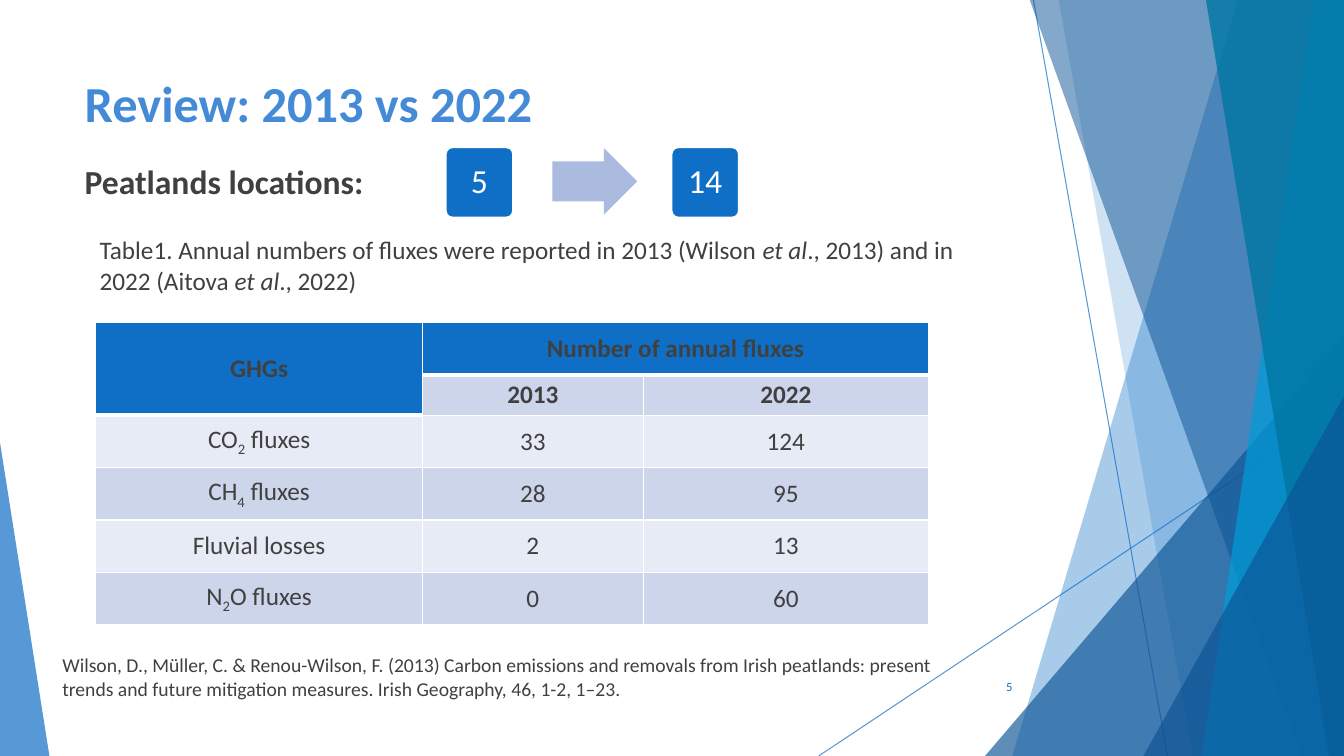
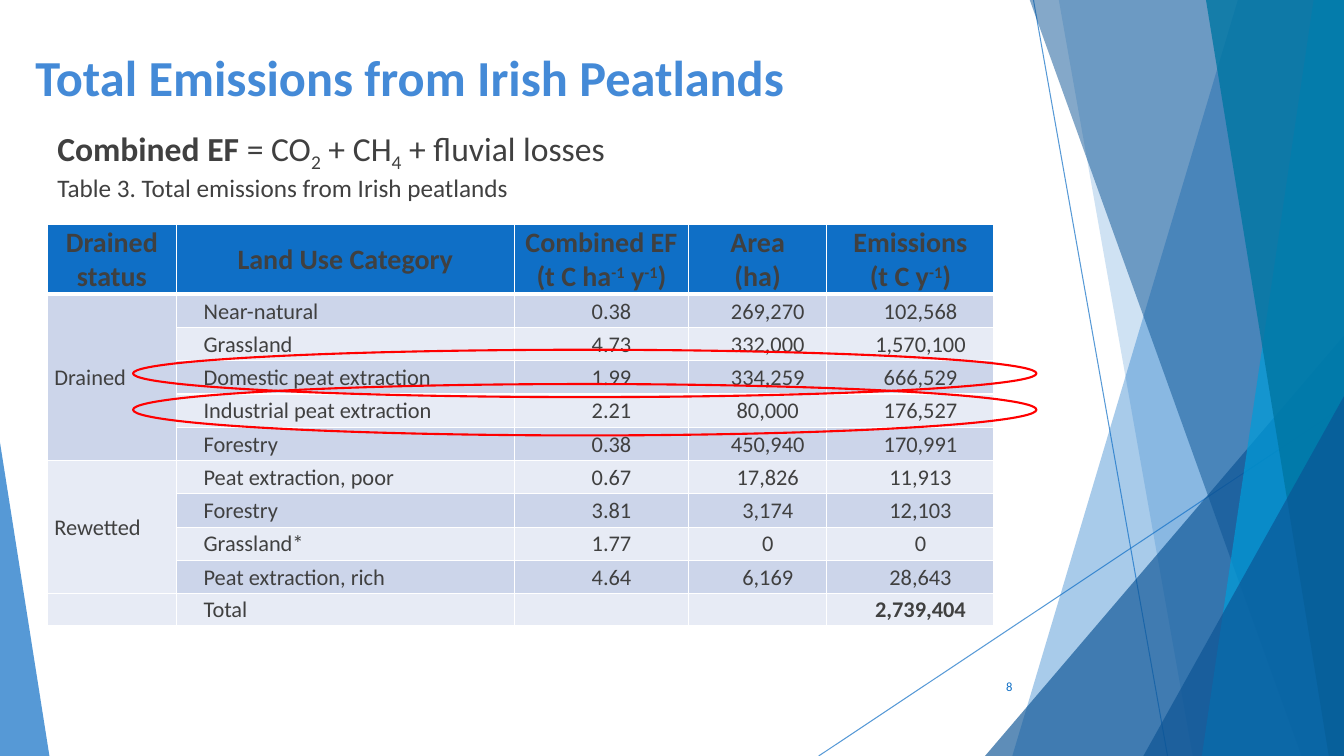
from dataclasses import dataclass

from lxml.etree import SubElement
from pptx import Presentation
from pptx.dml.color import RGBColor
from pptx.dml.fill import FillFormat
from pptx.enum.shapes import MSO_CONNECTOR, MSO_SHAPE
from pptx.enum.text import MSO_ANCHOR, PP_ALIGN
from pptx.oxml.ns import qn
from pptx.util import Inches, Pt

FONT = "Calibri"
BLUE, NAVY, CYAN, TEAL = "0F6FC6", "0B5394", "009DD9", "0076A3"
SKY, ARROW, RED, INK, WHITE = "448AD7", "ABBBDF", "FF0000", "404040", "FFFFFF"
TINTS = ("E7EBF5", "CCD5EA")
WIDE, HIGH = 13.33, 7.5
LEFT, MID, RIGHT = PP_ALIGN.LEFT, PP_ALIGN.CENTER, PP_ALIGN.RIGHT


@dataclass(frozen=True)
class Box:
    left: float
    top: float
    wide: float
    high: float

    def emu(self) -> tuple[int, ...]:
        return tuple(Inches(v) for v in (self.left, self.top, self.wide, self.high))


@dataclass(frozen=True)
class Ray:
    start: tuple[float, float]
    end: tuple[float, float]


@dataclass(frozen=True)
class Band:
    top: float
    foot: float
    color: str
    alpha: int


@dataclass(frozen=True)
class Peak:
    box: Box
    tip: float
    color: str
    alpha: int


@dataclass(frozen=True)
class Grid:
    box: Box
    cols: tuple[float, ...]
    rows: tuple[float, ...]
    pads: tuple[float, float, float, float]
    cells: tuple[tuple[str, ...], ...]
    spans: tuple[tuple[int, int, int, int], ...]


DECOR = (
    Ray((10.25, 0), (11.58, HIGH)),
    Ray((WIDE, 4.03), (8.12, HIGH)),
    Band(12.28, 10.04, BLUE, 36),
    Band(10.5, 11.83, BLUE, 20),
    Peak(Box(9.77, 3.33, 3.56, 4.17), 1, NAVY, 66),
    Band(10.21, 12.91, NAVY, 50),
    Band(13.03, 11.92, CYAN, 70),
    Band(11.96, 13.18, TEAL, 80),
    Peak(Box(11.34, 3.93, 1.99, 3.57), 1, NAVY, 66),
    Peak(Box(0, 4.39, 0.49, 3.11), 0, BLUE, 70),
)

FLUXES = Grid(
    Box(0.95, 3.2, 8.27, 3),
    (3.24, 2.19, 2.83),
    (0.52, 0.4) + (0.52,) * 4,
    (0.05,) * 4,
    (
        ("GHGs", "Number of annual fluxes", ""),
        ("", "2013", "2022"),
        ("CO|_2| fluxes", "33", "124"),
        ("CH|_4| fluxes", "28", "95"),
        ("Fluvial losses", "2", "13"),
        ("N|_2|O fluxes", "0", "60"),
    ),
    ((0, 0, 1, 0), (0, 1, 0, 2)),
)

TOTALS = Grid(
    Box(0.47, 2.23, 9.4, 3.98),
    (1.28, 3.35, 1.73, 1.37, 1.66),
    (0.69,) + (0.33,) * 9 + (0.32,),
    (0.07, 0.01, 0.07, 0),
    (
        ("Drained status", "Land Use Category", "Combined EF\n(t C ha|^-1| y|^-1|)",
         "Area\n(ha)", "Emissions\n(t C y|^-1|)"),
        ("Drained", "Near-natural", "0.38", "269,270", "102,568"),
        ("", "Grassland", "4.73", "332,000", "1,570,100"),
        ("", "Domestic peat extraction", "1.99", "334,259", "666,529"),
        ("", "Industrial peat extraction", "2.21", "80,000", "176,527"),
        ("", "Forestry", "0.38", "450,940", "170,991"),
        ("Rewetted", "Peat extraction, poor", "0.67", "17,826", "11,913"),
        ("", "Forestry", "3.81", "3,174", "12,103"),
        ("", "Grassland*", "1.77", "0", "0"),
        ("", "Peat extraction, rich", "4.64", "6,169", "28,643"),
        ("", "Total", "", "", "|*2,739,404"),
    ),
    ((1, 0, 5, 0), (6, 0, 9, 0)),
)


def paint(fill: FillFormat, color: str) -> None:
    fill.solid()
    fill.fore_color.rgb = RGBColor.from_string(color)


def fade(shape, alpha: int) -> None:
    for node in shape.element.iter(qn("a:srgbClr")):
        SubElement(node, qn("a:alpha")).set("val", str(alpha * 1000))


def write(frame, text: str, *, size: float, color: str = INK, bold: bool = False,
          align: PP_ALIGN = LEFT, after: float | None = None,
          line: float | None = None, indent: float = 0) -> None:
    frame.word_wrap = True
    for row, part in enumerate(text.split("\n")):
        para = frame.add_paragraph() if row else frame.paragraphs[0]
        para.alignment = align
        if after is not None:
            para.space_after = Pt(after)
        if line is not None:
            para.line_spacing = line
        if indent:
            para._p.get_or_add_pPr().set("marL", str(Inches(indent)))
        for bit in filter(None, part.split("|")):
            mark = bit[0] if bit[0] in "_^/*" else ""
            run = para.add_run()
            run.text = bit[len(mark):]
            font = run.font
            font.name, font.size = FONT, Pt(size)
            font.bold = bold or mark == "*"
            font.italic = mark == "/"
            paint(font.fill, color)
            if mark in ("_", "^"):
                base = "-25000" if mark == "_" else "30000"
                run._r.get_or_add_rPr().set("baseline", base)


def label(slide, box: Box, text: str, **form):
    frame = slide.shapes.add_textbox(*box.emu()).text_frame
    write(frame, text, **form)
    return frame


def shape(slide, kind: MSO_SHAPE, box: Box, color: str = "",
          edge: str = "", tips: tuple[float, ...] = ()):
    item = slide.shapes.add_shape(kind, *box.emu())
    for spot, value in enumerate(tips):
        item.adjustments[spot] = value
    return style(item, color, edge)


def style(item, color: str = "", edge: str = ""):
    item.shadow.inherit = False
    if color:
        paint(item.fill, color)
    else:
        item.fill.background()
    if edge:
        paint(item.line.fill, edge)
        item.line.width = Pt(1.5)
    else:
        item.line.fill.background()
    return item


def ray(slide, item: Ray):
    ends = [Inches(v) for v in (*item.start, *item.end)]
    link = slide.shapes.add_connector(MSO_CONNECTOR.STRAIGHT, *ends)
    paint(link.line.fill, BLUE)
    link.line.width = Pt(0.75)
    SubElement(link.element.spPr, qn("a:effectLst"))
    return link


def band(slide, item: Band):
    dots = [(item.top, -0.01), (WIDE, -0.01), (WIDE, HIGH), (item.foot, HIGH)]
    first, *rest = [(Inches(x), Inches(y)) for x, y in dots]
    pen = slide.shapes.build_freeform(*first)
    pen.add_line_segments(rest, close=True)
    return style(pen.convert_to_shape(), item.color)


def adorn(slide) -> None:
    tree = slide.slide_layout.shapes.element
    for spot, item in enumerate(DECOR):
        if isinstance(item, Ray):
            part, alpha = ray(slide, item), 70
        elif isinstance(item, Band):
            part, alpha = band(slide, item), item.alpha
        else:
            part = shape(slide, MSO_SHAPE.ISOSCELES_TRIANGLE, item.box,
                         item.color, tips=(item.tip,))
            alpha = item.alpha
        fade(part, alpha)
        next(part.element.iter(qn("p:cNvPr"))).set("id", str(100 + spot))
        tree.insert(2 + spot, part.element)


def rule(cell, head: bool) -> None:
    props = cell._tc.get_or_add_tcPr()
    for spot, side in enumerate("LRTB"):
        width = 3 if head and side == "B" else 1
        line = SubElement(props, qn(f"a:ln{side}"), w=str(Pt(width)))
        fill = SubElement(line, qn("a:solidFill"))
        SubElement(fill, qn("a:srgbClr"), val=WHITE)
        props.insert(spot, line)


def table(slide, grid: Grid, tints: tuple[str, str], form) -> None:
    size = len(grid.rows), len(grid.cols)
    chart = slide.shapes.add_table(*size, *grid.box.emu()).table
    for col, wide in zip(chart.columns, grid.cols):
        col.width = Inches(wide)
    for row, high in zip(chart.rows, grid.rows):
        row.height = Inches(high)
    for top, left, foot, side in grid.spans:
        chart.cell(top, left).merge(chart.cell(foot, side))
    for row, texts in enumerate(grid.cells):
        for col, text in enumerate(texts):
            cell = chart.cell(row, col)
            paint(cell.fill, tints[row % 2] if row else BLUE)
            rule(cell, row == 0)
            cell.vertical_anchor = MSO_ANCHOR.MIDDLE
            (cell.margin_left, cell.margin_top, cell.margin_right,
             cell.margin_bottom) = (Inches(v) for v in grid.pads)
            if text:
                write(cell.text_frame, text, **form(row, col))


def fluxform(row: int, col: int) -> dict:
    return {"size": 18, "bold": row < 2, "align": MID}


def sumform(row: int, col: int) -> dict:
    if row == 0:
        return {"size": 20, "bold": True, "align": MID}
    return {"size": 16, "after": 8, "align": MID if col > 1 else LEFT,
            "indent": 0.2 if col else 0}


def start(deck, title: str, box: Box, page: int):
    slide = deck.slides.add_slide(deck.slide_layouts[5])
    head = slide.shapes.title
    head.left, head.top, head.width, head.height = box.emu()
    head.text_frame.vertical_anchor = MSO_ANCHOR.TOP
    write(head.text_frame, title, size=36, color=SKY, bold=True)
    foot = label(slide, Box(9.39, 6.61, 0.75, 0.4), str(page),
                 size=9, color=BLUE, align=RIGHT)
    foot.vertical_anchor = MSO_ANCHOR.MIDDLE
    return slide


def badge(slide, left: float, text: str) -> None:
    tile = shape(slide, MSO_SHAPE.ROUNDED_RECTANGLE, Box(left, 1.46, 0.67, 0.7),
                 BLUE, WHITE, (0.1,))
    frame = tile.text_frame
    frame.margin_left = frame.margin_right = Inches(0.1)
    frame.vertical_anchor = MSO_ANCHOR.MIDDLE
    write(frame, text, size=24, color=WHITE, align=MID, line=0.9)


def review(deck) -> None:
    slide = start(deck, "Review: 2013 vs 2022", Box(0.74, 0.67, 9.4, 0.89), 5)
    adorn(slide)
    table(slide, FLUXES, TINTS, fluxform)
    label(slide, Box(0.89, 2.28, 9.1, 0.71),
          "Table1. Annual numbers of fluxes were reported in 2013 (Wilson |/et al|"
          "., 2013) and in 2022 (Aitova |/et al|., 2022)", size=18)
    label(slide, Box(0.52, 6.43, 9.14, 0.57),
          "Wilson, D., Müller, C. & Renou-Wilson, F. (2013) Carbon emissions and "
          "removals from Irish peatlands: present trends and future mitigation "
          "measures. Irish Geography, 46, 1-2, 1–23.", size=14)
    label(slide, Box(0.74, 1.55, 8.75, 0.5), "Peatlands locations:", size=24, bold=True)
    badge(slide, 4.42, "5")
    shape(slide, MSO_SHAPE.RIGHT_ARROW, Box(5.48, 1.47, 0.84, 0.66), ARROW,
          tips=(0.6, 0.5))
    badge(slide, 6.66, "14")


def totals(deck) -> None:
    slide = start(deck, "Total Emissions from Irish Peatlands",
                  Box(0.25, 0.41, 10.15, 0.85), 8)
    table(slide, TOTALS, TINTS, sumform)
    label(slide, Box(0.47, 1.22, 6.9, 0.5),
          "|*Combined EF |= CO|_2| + CH|_4| + fluvial losses", size=24)
    label(slide, Box(0.47, 1.66, 9.1, 0.71),
          "Table 3. Total emissions from Irish peatlands", size=18)
    for top, high in ((3.47, 0.47), (3.81, 0.51)):
        shape(slide, MSO_SHAPE.OVAL, Box(1.32, top, 8.96, high), edge=RED)


def main() -> None:
    deck = Presentation()
    deck.slide_width, deck.slide_height = Inches(WIDE), Inches(HIGH)
    review(deck)
    totals(deck)
    deck.save("out.pptx")


if __name__ == "__main__":
    main()
